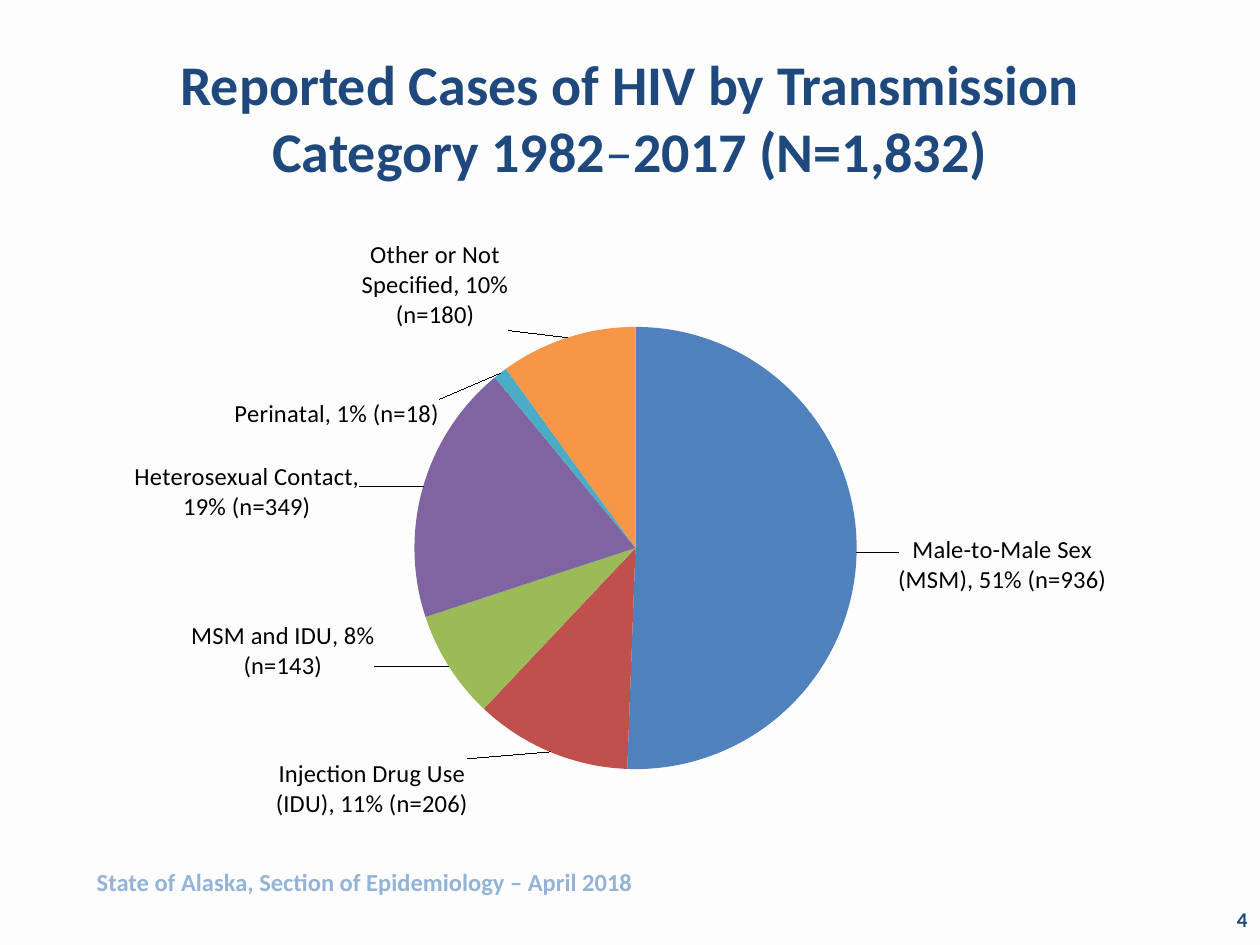
from lxml import etree
from pptx import Presentation
from pptx import util as u
from pptx.chart.data import CategoryChartData
from pptx.dml.color import RGBColor
from pptx.enum import chart as c
from pptx.enum import text as t
from pptx.oxml.ns import qn

NAVY, SKY, BLACK, PAPER = "1F497D", "95B3D7", "000000", "FDFDFE"
FONT = "Calibri"
TITLE = [("Reported Cases of HIV by Transmission Category 1982", True),
         ("–", False), ("2017 (N=1,832)", True)]
SLICES = [
    ("Male-to-Male Sex (MSM)", 889, "51% (n=936)", "4F81BD", (0.03, 0.02)),
    ("Injection Drug Use (IDU)", 201, "11% (n=206)", "C0504D", (-0.07, 0)),
    ("MSM and IDU", 139, "8% (n=143)", "9BBB59", (-0.06, -0.08)),
    ("Heterosexual Contact", 335, "19% (n=349)", "8064A2", (-0.05, 0.06)),
    ("Perinatal", 18, "1% (n=18)", "4BACC6", (-0.05, 0.1)),
    ("Other or Not Specified", 175, "10% (n=180)", "F79646", (-0.05, 0)),
]


def rgb(value):
    """Turn a hex string into a colour."""
    return RGBColor.from_string(value)


def set_format(target, values):
    """Set every attribute named in a dict."""
    for name, value in values.items():
        setattr(target, name, value)


def set_font(font, size, color, bold=False):
    """Apply the deck font with a size, colour and weight."""
    set_format(font, {"name": FONT, "size": u.Pt(size), "bold": bold})
    font.color.rgb = rgb(color)


def add_text(page, place, spans, size, color, align, anchor):
    """Add a one-paragraph text box from (text, bold) spans."""
    box = page.shapes.add_textbox(*map(u.Cm, place))
    set_format(box.text_frame, {"word_wrap": True, "vertical_anchor": anchor})
    para = box.text_frame.paragraphs[0]
    para.alignment = align
    for words, bold in spans:
        span = para.add_run()
        span.text = words
        set_font(span.font, size, color, bold)


def add_layout(parent, index, values):
    """Insert a manual chart layout into a chart element."""
    for old in parent.findall(qn("c:layout")):
        parent.remove(old)
    layout = etree.Element(qn("c:layout"))
    manual = etree.SubElement(layout, qn("c:manualLayout"))
    for name, value in values.items():
        etree.SubElement(manual, qn(f"c:{name}")).set("val", str(value))
    parent.insert(index, layout)


def style_slice(series, index, words, color, shift):
    """Colour one slice and place its label."""
    point = series.points[index]
    point.format.fill.solid()
    point.format.fill.fore_color.rgb = rgb(color)
    label = point.data_label
    span = label.text_frame.paragraphs[0].add_run()
    span.text = words
    set_font(span.font, 14, BLACK)
    label.position = c.XL_LABEL_POSITION.OUTSIDE_END
    element = series.data_labels._element.findall(qn("c:dLbl"))[index]
    add_layout(element, 1, dict(zip("xy", shift)))


def add_pie(page, place):
    """Add the pie chart of transmission categories."""
    data = CategoryChartData()
    data.categories = [row[0] for row in SLICES]
    data.add_series("Series 1", [row[1] for row in SLICES])
    chart = page.shapes.add_chart(c.XL_CHART_TYPE.PIE, *map(u.Cm, place), data).chart
    set_format(chart, {"has_title": False, "has_legend": False})
    set_font(chart.font, 18, BLACK)
    plot = chart.plots[0]
    plot.vary_by_categories = True
    series = plot.series[0]
    for index, (name, _, ending, color, shift) in enumerate(SLICES):
        style_slice(series, index, f"{name}, {ending}", color, shift)
    labels = series.data_labels
    set_format(labels, {"show_value": True, "show_percentage": True,
                        "show_category_name": True})
    set_font(labels.font, 14, BLACK)
    add_layout(chart._chartSpace.chart.plotArea, 0,
               {"layoutTarget": "inner", "xMode": "edge", "yMode": "edge",
                "x": 0.31, "y": 0.17, "w": 0.39, "h": 0.71})


def main():
    """Build the slide and save the deck."""
    deck = Presentation()
    set_format(deck, {"slide_width": u.Cm(25.4), "slide_height": u.Cm(19.05)})
    page = deck.slides.add_slide(deck.slide_layouts[6])
    page.background.fill.solid()
    page.background.fill.fore_color.rgb = rgb(PAPER)
    align, anchor = t.PP_ALIGN, t.MSO_ANCHOR
    add_text(page, (19.48, 18.01, 5.92, 1.02), [("4", True)], 12, NAVY,
             align.RIGHT, anchor.MIDDLE)
    add_text(page, (1.7, 17.35, 17.78, 0.86),
             [("State of Alaska, Section of Epidemiology – April 2018", True)],
             14, SKY, align.LEFT, anchor.TOP)
    add_text(page, (1.27, 0.76, 22.86, 3.18), TITLE, 32, NAVY,
             align.CENTER, anchor.MIDDLE)
    add_pie(page, (1.27, 4.45, 22.86, 12.57))
    deck.save("out.pptx")


if __name__ == "__main__":
    main()
